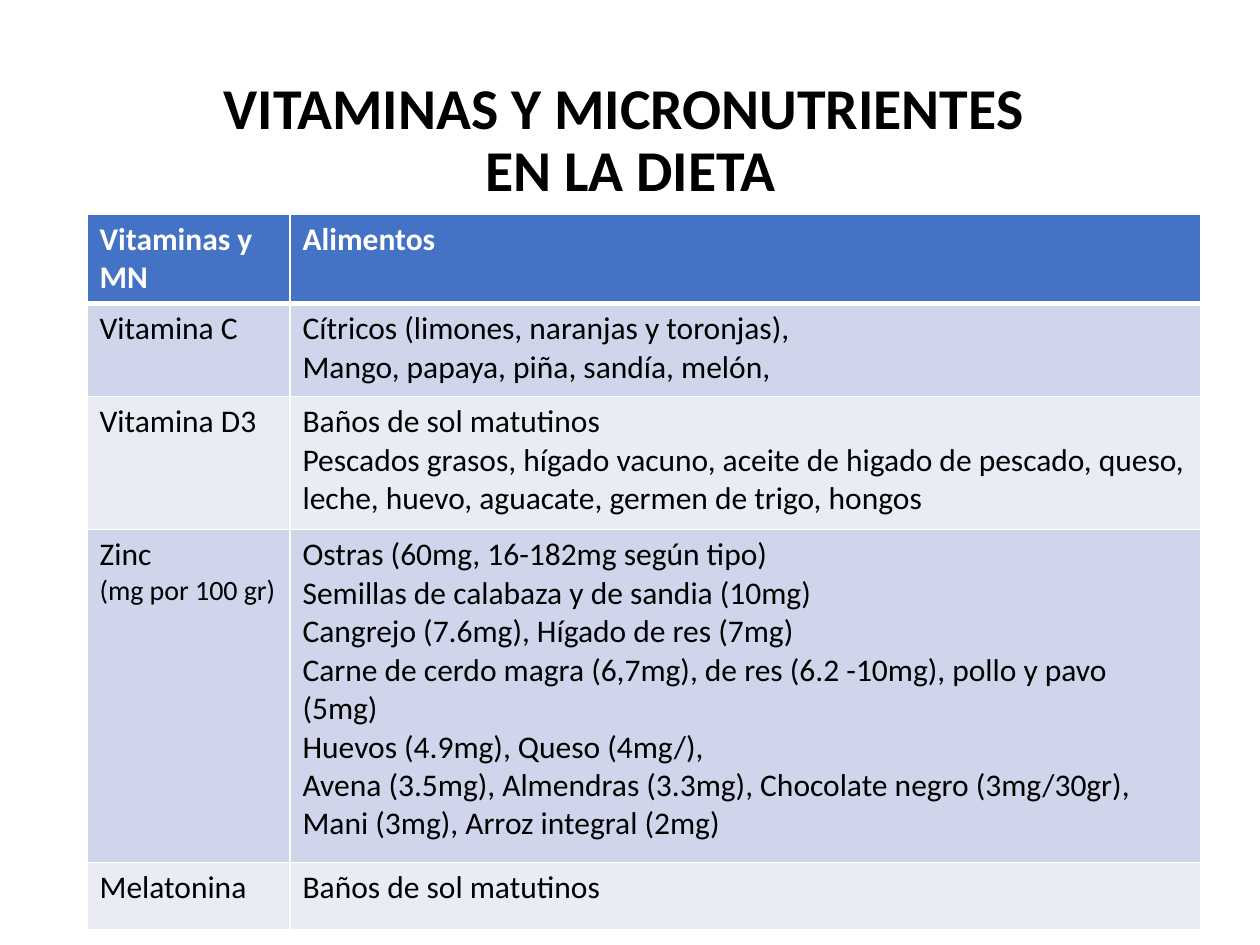
import pptx
import pptx.dml.color
import pptx.enum.text
import pptx.oxml.ns
import pptx.util
from lxml import etree

PX = 914400 / 126
FONT = "Calibri"
BLACK = pptx.dml.color.RGBColor(0x00, 0x00, 0x00)
WHITE = pptx.dml.color.RGBColor(0xFF, 0xFF, 0xFF)
HEADER_BLUE = pptx.dml.color.RGBColor(0x44, 0x72, 0xC4)
BANDS = [
    pptx.dml.color.RGBColor(0xCF, 0xD5, 0xEA),
    pptx.dml.color.RGBColor(0xE9, 0xEB, 0xF5),
]

TITLE = "VITAMINAS Y MICRONUTRIENTES \vEN LA DIETA"
COLUMN_WIDTHS = [203, 911]
ROW_HEIGHTS = [67, 93, 133, 333, 67]
FOODS = [
    ("Vitaminas y MN", "Alimentos"),
    ("Vitamina C",
     "Cítricos (limones, naranjas y toronjas),\n"
     "Mango, papaya, piña, sandía, melón,"),
    ("Vitamina D3",
     "Baños de sol matutinos\n"
     "Pescados grasos, hígado vacuno, aceite de higado de pescado, queso, "
     "leche, huevo, aguacate, germen de trigo, hongos"),
    ("Zinc\n(mg por 100 gr)",
     "Ostras (60mg, 16-182mg según tipo)\n"
     "Semillas de calabaza y de sandia (10mg)\n"
     "Cangrejo (7.6mg), Hígado de res (7mg)\n"
     "Carne de cerdo magra (6,7mg), de res (6.2 -10mg), pollo y pavo (5mg)\n"
     "Huevos (4.9mg), Queso (4mg/),\n"
     "Avena (3.5mg), Almendras (3.3mg), Chocolate negro (3mg/30gr), "
     "Mani (3mg), Arroz integral (2mg)"),
    ("Melatonina", "Baños de sol matutinos"),
]


def px(length):
    return pptx.util.Emu(round(length * PX))


def format_runs(paragraph, size, color, bold):
    for run in paragraph.runs:
        run.font.name = FONT
        run.font.size = pptx.util.Pt(size)
        run.font.color.rgb = color
        run.font.bold = bold


def add_title(slide):
    title = slide.shapes.title
    title.left, title.top, title.width, title.height = map(px, (59, 50, 1143, 183))
    frame = title.text_frame
    frame.text = TITLE
    frame.word_wrap = True
    frame.vertical_anchor = pptx.enum.text.MSO_ANCHOR.MIDDLE
    heading = frame.paragraphs[0]
    heading.alignment = pptx.enum.text.PP_ALIGN.CENTER
    heading.line_spacing = 0.9
    format_runs(heading, 33, BLACK, True)


def set_borders(cell, widths):
    """Draw white borders; widths are points by side, in L, R, T, B order."""
    properties = cell._tc.get_or_add_tcPr()
    qn = pptx.oxml.ns.qn
    for side, width in widths.items():
        line = etree.SubElement(properties, qn(f"a:ln{side}"), w=str(pptx.util.Pt(width)))
        fill = etree.SubElement(line, qn("a:solidFill"))
        etree.SubElement(fill, qn("a:srgbClr"), val=str(WHITE))


def fill_cell(cell, text, row):
    is_header = row == 0
    cell.text_frame.text = text
    for paragraph in cell.text_frame.paragraphs:
        # The unit note under a nutrient is slightly smaller
        size = 16 if paragraph.text.startswith("(") else 18
        format_runs(paragraph, size, WHITE if is_header else BLACK, is_header)
    # The rule below the header is thicker than the others
    set_borders(cell, {"L": 1, "R": 1, "T": 3 if row == 1 else 1,
                       "B": 3 if is_header else 1})
    cell.fill.solid()
    cell.fill.fore_color.rgb = HEADER_BLUE if is_header else BANDS[(row - 1) % 2]


def add_food_table(slide):
    foods = slide.shapes.add_table(
        len(ROW_HEIGHTS), len(COLUMN_WIDTHS), px(87), px(214),
        px(sum(COLUMN_WIDTHS)), px(sum(ROW_HEIGHTS))).table
    for column, width in zip(foods.columns, COLUMN_WIDTHS):
        column.width = px(width)
    for row, height in zip(foods.rows, ROW_HEIGHTS):
        row.height = px(height)
    for row, texts in enumerate(FOODS):
        for column, text in enumerate(texts):
            fill_cell(foods.cell(row, column), text, row)


def main():
    deck = pptx.Presentation()
    deck.slide_width, deck.slide_height = px(1260), px(945)
    slide = deck.slides.add_slide(deck.slide_layouts.get_by_name("Title Only"))
    add_title(slide)
    add_food_table(slide)
    deck.save("out.pptx")


if __name__ == "__main__":
    main()
